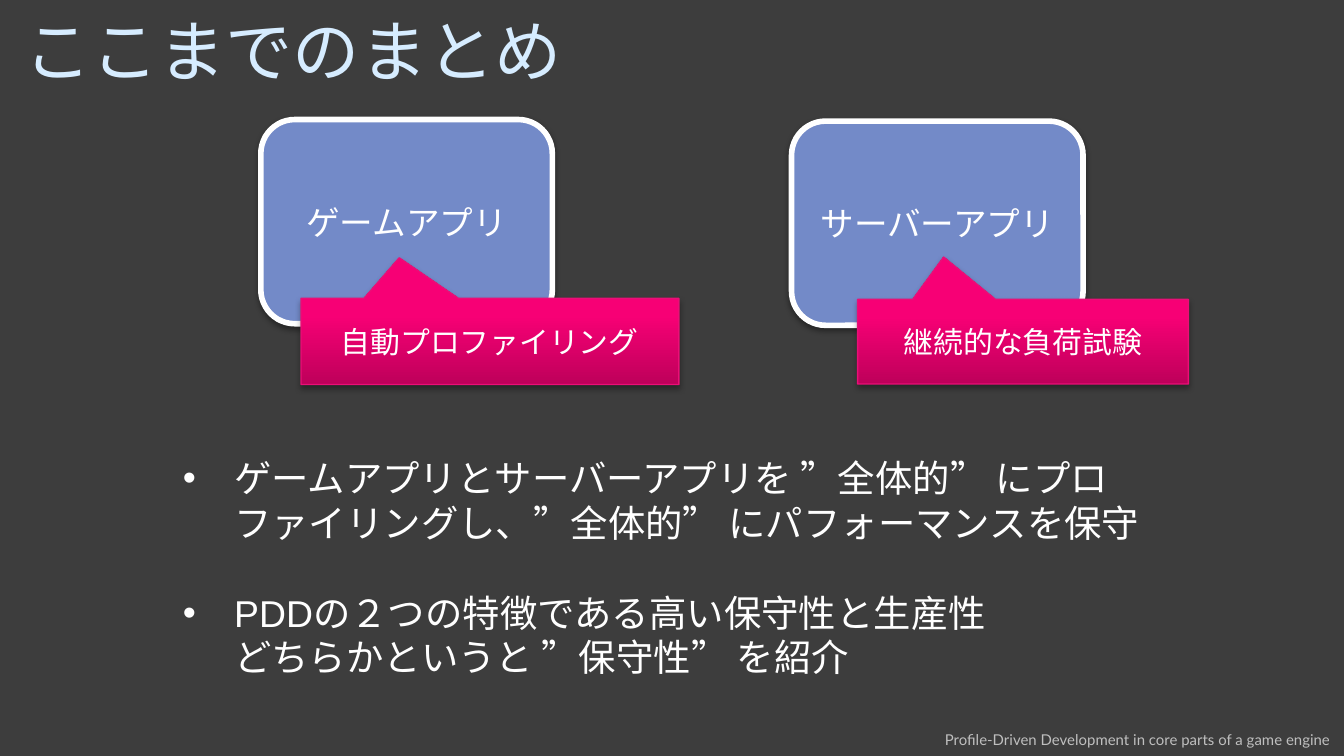
"""Build the summary slide on app profiling and load tests."""
import pptx
import pptx.dml.color
import pptx.enum.shapes
import pptx.enum.text
import pptx.oxml
import pptx.oxml.ns
import pptx.util

Cm = pptx.util.Cm
Pt = pptx.util.Pt
ALIGN = pptx.enum.text.PP_ALIGN
ANCHOR = pptx.enum.text.MSO_ANCHOR
KIND = pptx.enum.shapes.MSO_SHAPE


def tint(code):
    return pptx.dml.color.RGBColor.from_string(code)


class Deck:
    white = "FFFFFF"
    font = "Calibri"

    def __init__(self, wide, high):
        self.show = pptx.Presentation()
        self.show.slide_width = Cm(wide)
        self.show.slide_height = Cm(high)
        self.slide = self.show.slides.add_slide(self.show.slide_layouts[1])
        self.body = self.slide.placeholders[1]
        back = self.slide.background.fill
        back.solid()
        back.fore_color.rgb = tint("3D3D3D")

    def place(self, item, area):
        item.left, item.top, item.width, item.height = map(Cm, area)

    def style(self, para, size, color=white, font=font, align=ALIGN.LEFT):
        para.alignment = align
        for run in para.runs:
            run.font.size = Pt(size)
            run.font.name = font
            run.font.color.rgb = tint(color)

    def title(self, text, area):
        head = self.slide.shapes.title
        self.place(head, area)
        frame = head.text_frame
        frame.text = text
        frame.auto_size = pptx.enum.text.MSO_AUTO_SIZE.NONE
        frame.vertical_anchor = ANCHOR.MIDDLE
        self.style(frame.paragraphs[0], 36, "D6ECFF")

    def points(self, items, area, indent=0.97):
        self.place(self.body, area)
        frame = self.body.text_frame
        frame.auto_size = pptx.enum.text.MSO_AUTO_SIZE.NONE
        for index, item in enumerate(items):
            para = frame.add_paragraph() if index else frame.paragraphs[0]
            para.text = item
            props = para._p.get_or_add_pPr()
            props.set("marL", str(Cm(indent)))
            props.set("indent", str(-Cm(indent)))
            para.space_before = Pt(24 if index else 0)
            self.style(para, 20, font="Arial")

    def note(self, text, area):
        box = self.slide.shapes.add_textbox(*map(Cm, area))
        box.text_frame.word_wrap = True
        box.text_frame.text = text
        self.style(box.text_frame.paragraphs[0], 8, "BFBFBF", "Lato", ALIGN.RIGHT)

    def shade(self, shape, drop, alpha):
        shape.shadow.inherit = False
        effect = shape._element.spPr.find(pptx.oxml.ns.qn("a:effectLst"))
        effect.append(pptx.oxml.parse_xml(
            f'<a:outerShdw {pptx.oxml.ns.nsdecls("a")} blurRad="{Pt(3.1)}" '
            f'dist="{Pt(drop)}" dir="5400000" rotWithShape="0">'
            f'<a:srgbClr val="000000"><a:alpha val="{alpha * 1000}"/></a:srgbClr>'
            '</a:outerShdw>'))

    def shape(self, kind, text, area, size, edge, width):
        shape = self.slide.shapes.add_shape(kind, *map(Cm, area))
        shape.line.color.rgb = tint(edge)
        shape.line.width = Pt(width)
        frame = shape.text_frame
        frame.text = text
        frame.vertical_anchor = ANCHOR.MIDDLE
        self.style(frame.paragraphs[0], size, align=ALIGN.CENTER)
        return shape

    def app(self, text, area):
        box = self.shape(KIND.ROUNDED_RECTANGLE, text, area, 18, self.white, 3)
        box.fill.solid()
        box.fill.fore_color.rgb = tint("738AC8")
        self.shade(box, 1.6, 38)

    def callout(self, text, area, tip):
        box = self.shape(KIND.RECTANGULAR_CALLOUT, text, area, 16, "EA0F77", 0.75)
        box.adjustments[0], box.adjustments[1] = tip
        box.fill.gradient()
        box.fill.gradient_angle = 90
        for stop, (spot, color) in zip(
                box.fill.gradient_stops, [(0, "BE005A"), (0.8, "F70075")]):
            stop.position = spot
            stop.color.rgb = tint(color)
        self.shade(box, 1.8, 35)


def main():
    deck = Deck(25.4, 14.29)
    deck.note("Profile-Driven Development in core parts of a game engine",
              (15.7, 13.69, 9.7, 0.61))
    deck.title("ここまでのまとめ", (0.2, 0.1, 24.87, 1.68))
    deck.app("ゲームアプリ", (4.93, 2.26, 5.51, 3.86))
    deck.app("サーバーアプリ", (14.96, 2.29, 5.51, 3.86))
    deck.callout("自動プロファイリング", (5.69, 5.64, 7.14, 1.63), (-0.24, -0.97))
    deck.callout("継続的な負荷試験", (16.21, 5.66, 6.25, 1.6), (-0.24, -1))
    deck.points([
        "ゲームアプリとサーバーアプリを ”全体的” にプロファイリングし、"
        "”全体的” にパフォーマンスを保守",
        "PDDの２つの特徴である高い保守性と生産性\nどちらかというと ”保守性” を紹介",
    ], (3.2, 8.48, 19, 4.52))
    deck.show.save("out.pptx")


if __name__ == "__main__":
    main()
